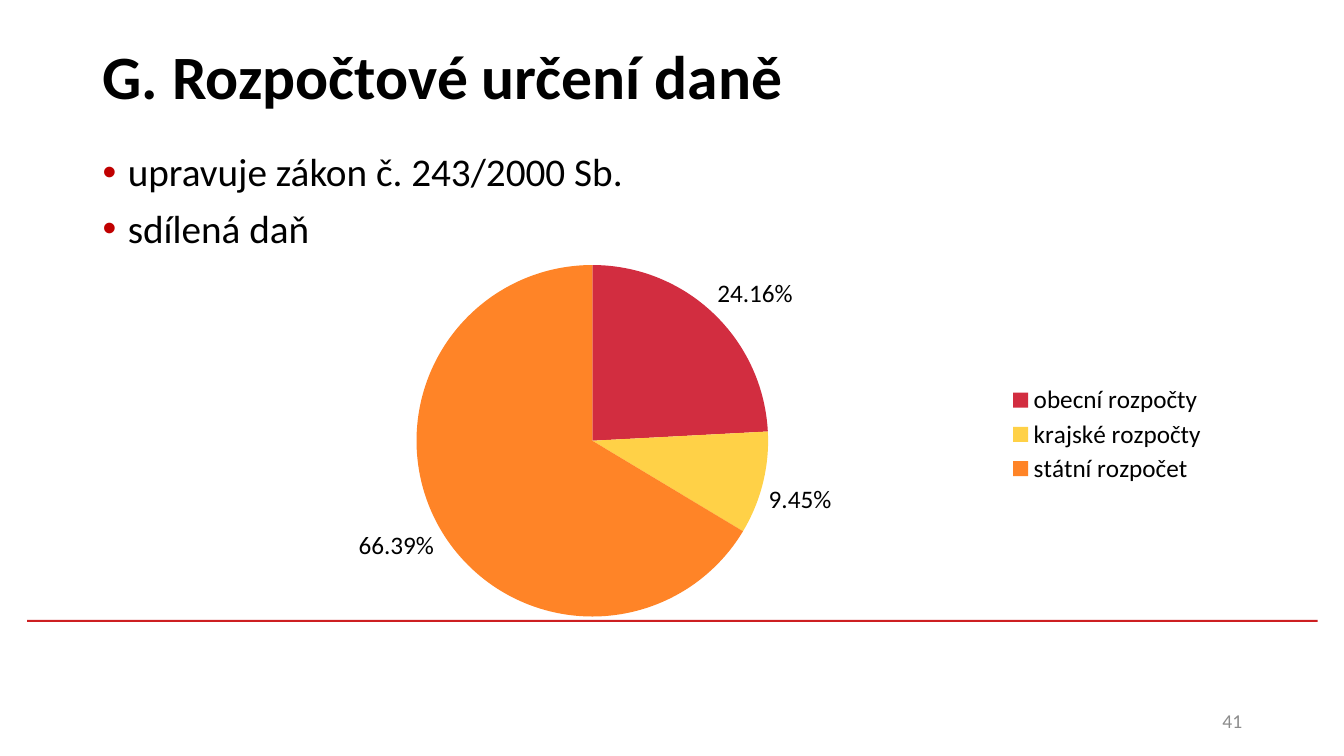
"""Slide on the budget allocation of the tax, with a pie of its shares."""
from pptx import Presentation
from pptx.chart.data import CategoryChartData
from pptx.dml.color import RGBColor
from pptx.enum.chart import XL_CHART_TYPE, XL_LABEL_POSITION, XL_LEGEND_POSITION
from pptx.enum.shapes import MSO_SHAPE
from pptx.enum.text import MSO_ANCHOR, PP_ALIGN
from pptx.oxml import parse_xml
from pptx.oxml.ns import nsdecls
from pptx.util import Inches, Pt

PIE = XL_CHART_TYPE.PIE
OUTER = XL_LABEL_POSITION.OUTSIDE_END
SIDE = XL_LEGEND_POSITION.RIGHT
RECT = MSO_SHAPE.RECTANGLE
TOP, MIDDLE = MSO_ANCHOR.TOP, MSO_ANCHOR.MIDDLE
LEFT, RIGHT = PP_ALIGN.LEFT, PP_ALIGN.RIGHT

BLACK = RGBColor(0, 0, 0)
GREY = RGBColor(0x8C, 0x8C, 0x8C)
RED = RGBColor(0xCD, 0x1F, 0x21)
DOT = RGBColor(0xC0, 0, 0)
FONT = "Calibri"

TITLE = "G. Rozpočtové určení daně"
POINTS = ["upravuje zákon č. 243/2000 Sb.", "sdílená daň"]
NUMBER = "41"
SHARES = [
    ("obecní rozpočty", 0.2416, RGBColor(0xD2, 0x2D, 0x40)),
    ("krajské rozpočty", 0.0945, RGBColor(0xFF, 0xD1, 0x47)),
    ("státní rozpočet", 0.6639, RGBColor(0xFF, 0x84, 0x27)),
]

WIDE, HIGH = 13.33, 7.5
EDGE, BODY = 0.92, 11.5
RULE = (0.27, 6.15, 12.8, 0.02)
HEAD = (EDGE, 0.02, BODY, 1.45)
LIST = (EDGE, 1.47, BODY, 4.57)
FOOT = (EDGE + BODY - 3, 6.95, 3, 0.4)
CHART = (1.15, 2.38, 11.51, 3.89)
DISC = (4.13, 2.63, 3.49, 3.49)
KEY = (9.93, 3.78, 2.1, 1.06)


def inches(box):
    return [Inches(n) for n in box]


def add_text(slide, box, lines, size, color=BLACK, bold=False,
             anchor=MIDDLE, align=LEFT, bullet=False):
    frame = slide.shapes.add_textbox(*inches(box)).text_frame
    frame.word_wrap = True
    frame.vertical_anchor = anchor
    for i, line in enumerate(lines):
        para = frame.paragraphs[0] if i == 0 else frame.add_paragraph()
        para.alignment = align
        para.line_spacing = 0.9 if bullet else 1.0
        if i:
            para.space_before = Pt(10)
        if bullet:
            add_bullet(para)
        run = para.add_run()
        run.text = line
        font = run.font
        font.name, font.size, font.bold = FONT, Pt(size), bold
        font.color.rgb = color


def add_bullet(para):
    props = para._p.get_or_add_pPr()
    props.set("marL", str(Inches(0.25)))
    props.set("indent", str(-Inches(0.25)))
    ns = nsdecls("a")
    for part in (
        f'<a:buClr {ns}><a:srgbClr val="{DOT}"/></a:buClr>',
        f'<a:buFont {ns} typeface="Arial"/>',
        f'<a:buChar {ns} char="•"/>',
    ):
        props.append(parse_xml(part))


def layout(box, inner=False):
    left, top, wide, high = CHART
    x, y, w, h = box
    shares = {"x": (x - left) / wide, "y": (y - top) / high,
              "w": w / wide, "h": h / high}
    target = '<c:layoutTarget val="inner"/>' if inner else ""
    modes = "".join(f'<c:{n}Mode val="edge"/>' for n in "xy")
    sizes = "".join(f'<c:{n} val="{v:.3f}"/>' for n, v in shares.items())
    return parse_xml(f'<c:layout {nsdecls("c")}><c:manualLayout>'
                     f'{target}{modes}{sizes}</c:manualLayout></c:layout>')


def add_pie(slide):
    data = CategoryChartData(number_format="0.00%")
    data.categories = [name for name, _, _ in SHARES]
    data.add_series("Series 1", [share for _, share, _ in SHARES])
    chart = slide.shapes.add_chart(PIE, *inches(CHART), data).chart
    chart.has_title = False
    chart.font.name, chart.font.size = FONT, Pt(18)
    chart.font.color.rgb = BLACK
    plot = chart.plots[0]
    plot.vary_by_categories = True
    for i, (_, _, color) in enumerate(SHARES):
        fill = plot.series[0].points[i].format.fill
        fill.solid()
        fill.fore_color.rgb = color
    plot.has_data_labels = True
    labels = plot.data_labels
    labels.show_value, labels.show_percentage = True, False
    labels.number_format, labels.number_format_is_linked = "0.00%", False
    labels.position = OUTER
    labels.font.name, labels.font.size = FONT, Pt(18)
    labels.font.color.rgb = BLACK
    chart.has_legend = True
    legend = chart.legend
    legend.position, legend.include_in_layout = SIDE, False
    legend.font.name, legend.font.size = FONT, Pt(18)
    legend.font.color.rgb = BLACK
    space = chart._chartSpace
    for old in space.xpath(".//c:plotArea/c:layout | .//c:legend/c:layout"):
        old.getparent().remove(old)
    space.xpath(".//c:plotArea")[0].insert(0, layout(DISC, True))
    space.xpath(".//c:legend/c:overlay")[0].addprevious(layout(KEY))


def main():
    deck = Presentation()
    deck.slide_width, deck.slide_height = Inches(WIDE), Inches(HIGH)
    slide = deck.slides.add_slide(deck.slide_layouts[6])
    rule = slide.shapes.add_shape(RECT, *inches(RULE))
    rule.shadow.inherit = False
    rule.fill.solid()
    rule.fill.fore_color.rgb = RED
    rule.line.fill.background()
    add_text(slide, HEAD, [TITLE], 44, bold=True)
    add_text(slide, LIST, POINTS, 28, anchor=TOP, bullet=True)
    add_text(slide, FOOT, [NUMBER], 14, GREY, align=RIGHT)
    add_pie(slide)
    deck.save("out.pptx")


if __name__ == "__main__":
    main()
